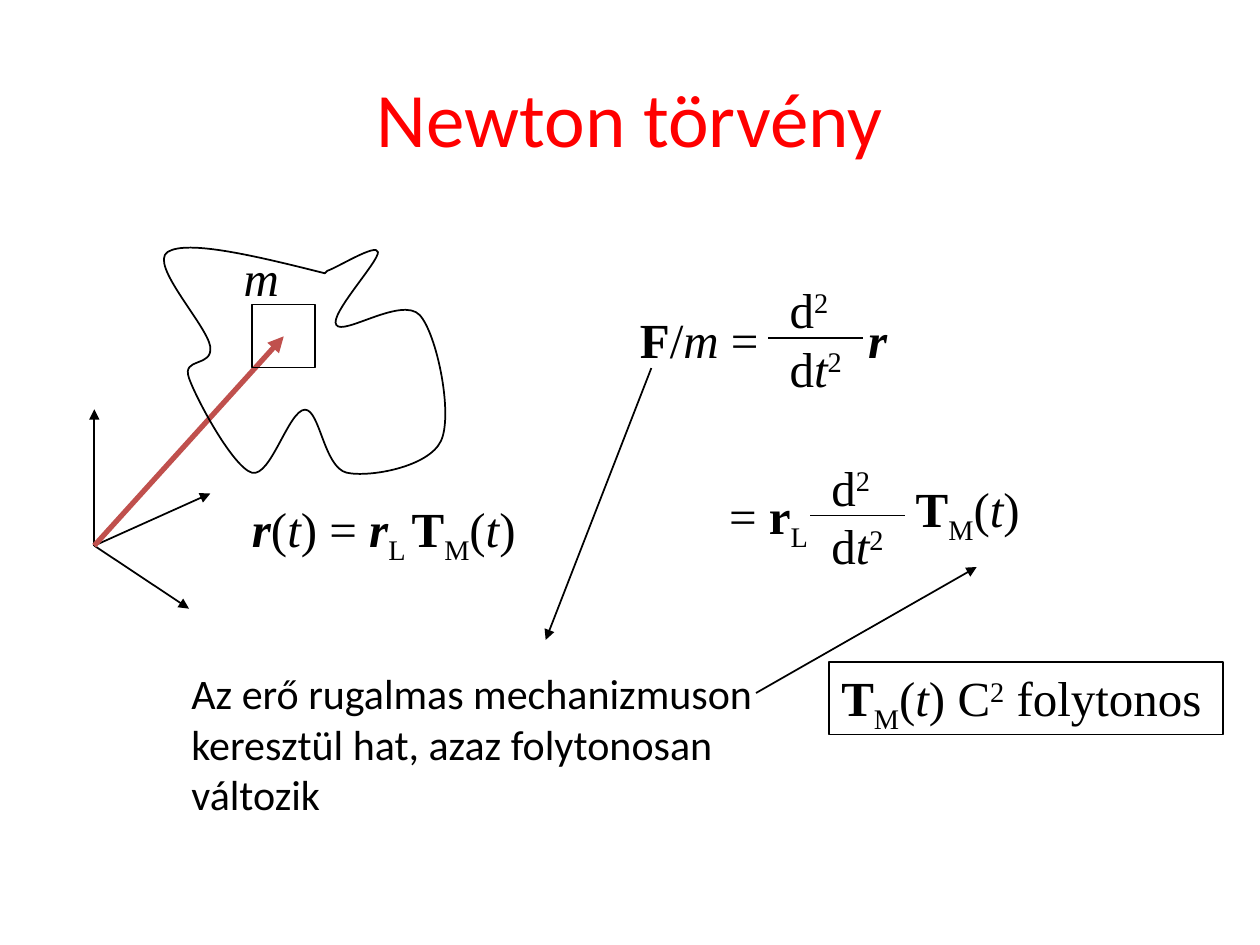
from lxml.etree import SubElement
from pptx import Presentation
from pptx.dml.color import RGBColor
from pptx.enum.shapes import MSO_CONNECTOR, MSO_SHAPE
from pptx.enum.text import MSO_ANCHOR, PP_ALIGN
from pptx.oxml.ns import qn
from pptx.util import Cm, Pt

BLACK = RGBColor(0, 0, 0)
RED = RGBColor(255, 0, 0)
BRICK = RGBColor(0xC0, 0x50, 0x4D)
SERIF = "Times New Roman"
SANS = "Calibri"

T_M = [("T", "b"), ("M", "_"), ("(", ""), ("t", "i"), (")", "")]
SECOND_DERIVATIVE = [
    [("d", ""), ("2", "^")],
    [("d", ""), ("t", "i"), ("2", "^")],
]
BODY_START = (655, 551)
BODY_CURVES = [
    (516, 516), (378, 483), (338, 508),
    (300, 533), (417, 655), (424, 699),
    (429, 742), (366, 719), (381, 762),
    (396, 805), (470, 942), (508, 953),
    (546, 963), (582, 826), (615, 826),
    (645, 826), (653, 942), (699, 953),
    (744, 963), (864, 942), (889, 889),
    (914, 836), (881, 673), (846, 635),
    (810, 597), (691, 678), (678, 655),
    (663, 635), (765, 526), (762, 508),
    (759, 490), (683, 538), (660, 546),
]


def write(tf, lines, size=28, font=SERIF, color=BLACK, align=PP_ALIGN.LEFT):
    for n, line in enumerate(lines):
        p = tf.add_paragraph() if n else tf.paragraphs[0]
        p.alignment = align
        for text, style in line:
            r = p.add_run()
            r.text = text
            r.font.size = Pt(size)
            r.font.name = font
            r.font.color.rgb = color
            r.font.bold = "b" in style
            r.font.italic = "i" in style
            if "_" in style:
                r._r.get_or_add_rPr().set("baseline", "-25000")
            elif "^" in style:
                r._r.get_or_add_rPr().set("baseline", "30000")


class Sketch:
    def __init__(self, slide, color=BLACK, width=1):
        self.s = slide
        self.color = color
        self.width = width

    def outline(self, sp):
        sp.shadow.inherit = False
        sp.fill.background()
        sp.line.color.rgb = self.color
        sp.line.width = Pt(self.width)

    def title(self, text, x, y, w, h):
        sp = self.s.shapes.title
        sp.left, sp.top, sp.width, sp.height = Cm(x), Cm(y), Cm(w), Cm(h)
        sp.text_frame.vertical_anchor = MSO_ANCHOR.MIDDLE
        write(sp.text_frame, [[(text, "")]], size=44, font=SANS, color=RED,
              align=PP_ALIGN.CENTER)

    def text(self, lines, x, y, w, h, **fmt):
        sp = self.s.shapes.add_textbox(Cm(x), Cm(y), Cm(w), Cm(h))
        sp.text_frame.word_wrap = False
        write(sp.text_frame, lines, **fmt)

    def line(self, start, end, color=None, width=None, arrow=True):
        sp = self.s.shapes.add_connector(
            MSO_CONNECTOR.STRAIGHT, *map(Cm, start + end))
        sp.line.color.rgb = color or self.color
        sp.line.width = Pt(width or self.width)
        if arrow:
            SubElement(sp.line._get_or_add_ln(), qn("a:tailEnd"), type="triangle")
        SubElement(sp._element.spPr, qn("a:effectLst"))

    def rect(self, x, y, w, h, lines=()):
        sp = self.s.shapes.add_shape(
            MSO_SHAPE.RECTANGLE, Cm(x), Cm(y), Cm(w), Cm(h))
        self.outline(sp)
        tf = sp.text_frame
        tf.word_wrap = True
        tf.vertical_anchor = MSO_ANCHOR.TOP
        write(tf, lines)

    def curve(self, start, points):
        fb = self.s.shapes.build_freeform(*start, scale=Cm(0.01))
        fb.add_line_segments(points, close=True)
        sp = fb.convert_to_shape()
        self.outline(sp)
        segments = list(sp._element.iter(qn("a:lnTo")))
        for i in range(0, len(points), 3):
            group = segments[i:i + 3]
            path = group[0].getparent()
            bezier = path.makeelement(qn("a:cubicBezTo"))
            group[0].addprevious(bezier)
            for segment in group:
                bezier.append(segment[0])
                path.remove(segment)

    def derivative(self, x, y):
        self.text(SECOND_DERIVATIVE, x, y, 1.63, 2.62)
        self.line((x - 0.18, y + 1.3), (x + 1.73, y + 1.3), arrow=False)


def main():
    prs = Presentation()
    prs.slide_width, prs.slide_height = Cm(25.4), Cm(19.05)
    sk = Sketch(prs.slides.add_slide(prs.slide_layouts[5]))
    sk.title("Newton törvény", 1.27, 0.76, 22.86, 3.18)

    origin = (1.9, 11)
    for tip in [(1.9, 8.25), (3.81, 12.27), (4.24, 9.95)]:
        sk.line(origin, tip)
    sk.line(origin, (5.72, 6.78), color=BRICK, width=3)
    sk.curve(BODY_START, BODY_CURVES)
    sk.rect(5.08, 6.14, 1.27, 1.27)
    sk.text([[("m", "i")]], 4.66, 4.87, 1.22, 1.45)
    sk.text([[("r", "bi"), ("(", ""), ("t", "i"), (") = ", ""), ("r", "bi"),
              ("L ", "_")] + T_M], 4.83, 9.93, 6.27, 1.45)

    sk.text([[("F", "b"), ("/", ""), ("m", "i"), (" =", "")]],
            12.65, 6.12, 3.3, 1.45)
    sk.derivative(15.67, 5.51)
    sk.text([[("r", "bi")]], 17.25, 6.12, 1, 1.45)
    sk.text([[("= ", ""), ("r", "b"), ("L", "_")]], 14.45, 9.67, 2.3, 1.45)
    sk.derivative(16.51, 9.09)
    sk.text([T_M], 18.21, 9.53, 2.69, 1.45)

    sk.line((13.13, 7.42), (11, 12.9))
    sk.text([[("Az erő rugalmas mechanizmuson", "")],
             [("keresztül hat, azaz folytonosan", "")],
             [("változik", "")]], 3.61, 13.34, 11.91, 3.33, size=24, font=SANS)
    sk.line((15.24, 13.97), (19.69, 11.43))
    sk.rect(16.71, 13.34, 7.95, 1.47,
            [T_M + [(" C", ""), ("2", "^"), (" folytonos", "")]])
    prs.save("out.pptx")


if __name__ == "__main__":
    main()
